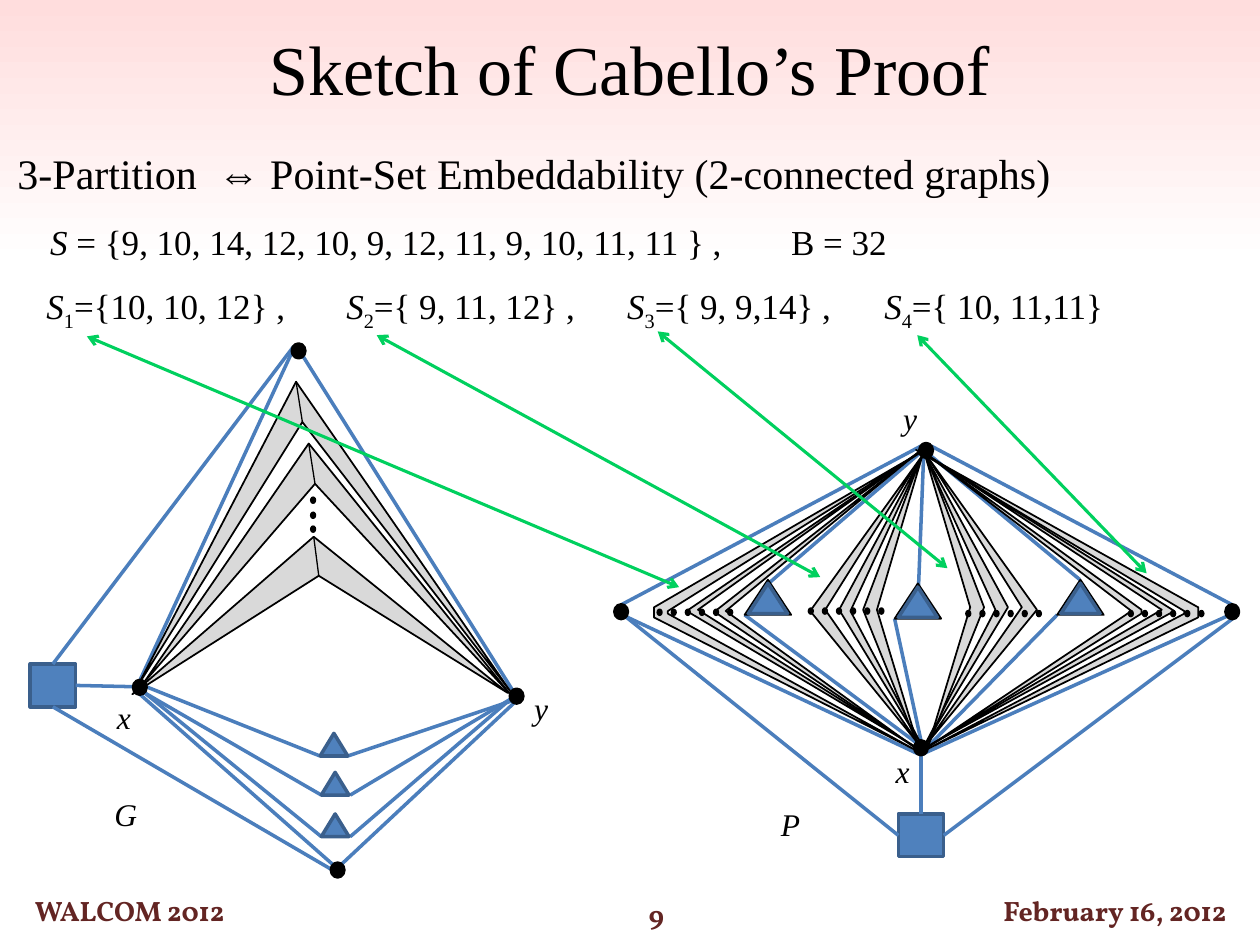
from lxml import etree
from pptx import Presentation
from pptx.dml.color import RGBColor
from pptx.enum.shapes import MSO_CONNECTOR as LineType, MSO_SHAPE as Preset
from pptx.enum.text import MSO_ANCHOR as Anchor, PP_ALIGN as Align
from pptx.oxml.ns import qn
from pptx.util import Inches, Pt

color = RGBColor.from_string
SERIF, FOOTER_FONT = "Times New Roman", "Vollkorn"
BLACK, WHITE, MAROON = "000000", "FFFFFF", "632523"
BLUE, BLUE_EDGE, BLUE_LINE = "4F81BD", "3A5F8C", "4B7EBC"
GRAY, GREEN, PINK = "D9D9D9", "00D05E", "FFDDDD"

deck = Presentation()
deck.slide_width, deck.slide_height = Inches(10), Inches(7.5)
page = deck.slides.add_slide(deck.slide_layouts[5])
shapes = page.shapes


def paint(shape, fill, line=None, width=1):
    shape.shadow.inherit = False
    shape.fill.solid()
    shape.fill.fore_color.rgb = color(fill)
    if line:
        shape.line.color.rgb = color(line)
        shape.line.width = Pt(width)
    else:
        shape.line.fill.background()


def link(start, end, line, width):
    connector = shapes.add_connector(LineType.STRAIGHT, *map(Inches, start + end))
    connector.line.color.rgb = color(line)
    connector.line.width = Pt(width)
    etree.SubElement(connector._element.spPr, qn("a:effectLst"))
    return connector


backdrop = shapes.add_shape(Preset.RECTANGLE, 0, 0, Inches(10), Inches(7.01))
backdrop.shadow.inherit = False
backdrop.line.fill.background()
backdrop.fill.gradient()
backdrop.fill.gradient_angle = 90
for stop, position, tint in zip(backdrop.fill.gradient_stops, (0.7, 1), (WHITE, PINK)):
    stop.position = position
    stop.color.rgb = color(tint)
shapes._spTree.remove(backdrop._element)
shapes._spTree.insert(2, backdrop._element)

title = shapes.title
title.left, title.top = Inches(0), Inches(0.15)
title.width, title.height = Inches(10), Inches(0.77)
title.text_frame.text = "Sketch of Cabello’s Proof"
title_para = title.text_frame.paragraphs[0]
title_para.alignment = Align.CENTER
title_font = title_para.runs[0].font
title_font.name, title_font.size = SERIF, Pt(40)
title_font.color.rgb = color(BLACK)

for left, top, width, words in [
    (0, 7.05, 2.06, "WALCOM 2012"),
    (7.7, 7.05, 2.3, "February 16, 2012"),
    (4.18, 7.08, 2.06, "9"),
]:
    box = shapes.add_shape(Preset.ROUNDED_RECTANGLE, Inches(left), Inches(top), Inches(width), Inches(0.35))
    box.shadow.inherit = False
    box.fill.background()
    box.line.fill.background()
    box.text_frame.text = words
    box.text_frame.word_wrap = False
    box.text_frame.vertical_anchor = Anchor.MIDDLE
    para = box.text_frame.paragraphs[0]
    para.alignment = Align.CENTER
    font = para.runs[0].font
    font.name, font.size, font.bold = FOOTER_FONT, Pt(16), True
    font.color.rgb = color(MAROON)

subsets = []
for number, members in enumerate(
    ["={10, 10, 12} ,\t", "={ 9, 11, 12} ,\t", "={ 9, 9,14} ,\t", "={ 10, 11,11}"], 1
):
    subsets += [("S", "italic"), (str(number), "sub"), (members, "")]

statements = [
    (0.04, 1.12, 8.5, 0.5, 24, [1.59],
     [("3-Partition\t⇔ Point-Set Embeddability (2-connected graphs)", "")]),
    (0.3, 1.7, 6.9, 0.44, 20, [5.88],
     [("S", "italic"), (" = {9, 10, 14, 12, 10, 9, 12, 11, 9, 10, 11, 11 } ,\tB = 32", "")]),
    (0.27, 2.21, 9.73, 0.77, 20, [2.38, 4.61, 6.65], subsets),
]
labels = [("y", 4.14, 5.42), ("x", 0.83, 5.49), ("G", 0.81, 6.26),
          ("P", 6.1, 6.34), ("x", 7.01, 5.92), ("y", 7.07, 3.12)]
for name, left, top in labels:
    width = 0.37 if name.isupper() else 0.31
    statements.append((left, top, width, 0.4, 18, [], [(name, "italic")]))

for left, top, width, height, size, tabs, pieces in statements:
    box = shapes.add_textbox(*map(Inches, (left, top, width, height)))
    box.text_frame.word_wrap = width > 1
    para = box.text_frame.paragraphs[0]
    if tabs:
        tab_list = etree.SubElement(para._p.get_or_add_pPr(), qn("a:tabLst"))
        for tab in tabs:
            etree.SubElement(tab_list, qn("a:tab"), pos=str(Inches(tab)), algn="l")
    for words, style in pieces:
        span = para.add_run()
        span.text = words
        span.font.name, span.font.size = SERIF, Pt(size)
        span.font.italic = style == "italic"
        span.font.color.rgb = color(BLACK)
        if style == "sub":
            span.font._element.set("baseline", "-25000")

for left, top, spokes in [
    (0.24, 5.27, [(0, (2.33, 2.75)), (3, (1.06, 5.45)), (2, (2.63, 6.9))]),
    (7.13, 6.46, [(0, (7.31, 5.99)), (1, (4.96, 4.89)), (3, (9.81, 4.89))]),
]:
    square = shapes.add_shape(Preset.RECTANGLE, Inches(left), Inches(top), Inches(0.36), Inches(0.34))
    paint(square, BLUE, BLUE_EDGE, 2)
    for side, end in spokes:
        link((left, top), end, BLUE_LINE, 2).begin_connect(square, side)

edges = [
    ((1.16, 5.45), (2.54, 6)), ((2.76, 6), (4.07, 5.56)),
    ((1.15, 5.5), (2.55, 6.31)), ((2.78, 6.31), (4.05, 5.55)),
    ((1.15, 5.5), (2.55, 6.64)), ((2.78, 6.64), (4.05, 5.55)),
    ((1.11, 5.51), (2.64, 6.86)), ((2.71, 6.86), (4.09, 5.57)),
    ((2.4, 2.82), (4.07, 5.48)), ((2.32, 2.79), (1.11, 5.4)),
    ((5.91, 4.88), (7.28, 5.9)), ((6.1, 4.63), (7.32, 3.58)),
    ((7.1, 4.91), (7.31, 5.88)), ((7.29, 4.66), (7.33, 3.63)),
    ((8.39, 4.88), (7.35, 5.94)), ((8.57, 4.6), (7.39, 3.62)),
    ((7.31, 3.54), (4.93, 4.8)), ((9.78, 4.8), (7.39, 3.54)),
    ((4.96, 4.89), (7.28, 5.98)), ((7.31, 5.99), (9.74, 4.89)),
]
for start, end in edges:
    link(start, end, BLUE_LINE, 2)

triangles = [(left, top, 0.22, 0.18, BLUE_EDGE, 2) for left, top in [(2.54, 5.82), (2.55, 6.13), (2.55, 6.46)]]
for left, top in [(5.91, 4.6), (7.1, 4.63), (8.39, 4.6)]:
    triangles += [(left, top, 0.37, 0.28, BLACK, 1),
                  (left + 0.03, top + 0.03, 0.31, 0.24, BLUE_EDGE, 2)]
for left, top, width, height, edge, weight in triangles:
    triangle = shapes.add_shape(Preset.ISOSCELES_TRIANGLE, *map(Inches, (left, top, width, height)))
    paint(triangle, BLUE, edge, weight)

blades = [
    [(1.05, 5.51), (2.49, 4.26), (4.03, 5.5), (2.53, 4.57)],
    [(1.09, 5.45), (2.35, 3.03), (4.06, 5.5), (2.4, 3.35)],
    [(1.14, 5.42), (2.45, 3.52), (4.05, 5.51), (2.5, 3.84)],
    [(7.28, 5.96), (5.19, 4.9), (5.19, 4.82), (7.34, 3.57), (5.3, 4.85), (5.3, 4.87)],
    [(7.27, 5.93), (5.45, 4.85), (7.28, 3.6), (5.54, 4.84)],
    [(7.27, 5.94), (5.69, 4.87), (5.69, 4.84), (7.3, 3.58), (5.76, 4.85)],
    [(7.31, 5.93), (6.43, 4.85), (7.31, 3.63), (6.55, 4.84)],
    [(7.33, 5.94), (6.66, 4.84), (7.34, 3.58), (6.75, 4.85)],
    [(7.29, 5.93), (6.85, 4.84), (7.34, 3.55), (6.96, 4.84)],
    [(7.35, 5.91), (8.23, 4.84), (7.35, 3.61), (8.11, 4.82)],
    [(7.33, 5.93), (8, 4.82), (7.32, 3.57), (7.9, 4.84)],
    [(7.37, 5.91), (7.81, 4.82), (7.32, 3.54), (7.7, 4.82)],
    [(7.33, 5.96), (9.51, 4.9), (9.51, 4.82), (7.27, 3.57), (9.4, 4.85), (9.4, 4.87)],
    [(7.35, 5.93), (9.32, 4.85), (7.34, 3.6), (9.22, 4.84)],
    [(7.35, 5.94), (9.06, 4.87), (9.06, 4.84), (7.32, 3.58), (8.98, 4.85)],
]
for blade in blades:
    corners = [(Inches(x), Inches(y)) for x, y in blade]
    builder = shapes.build_freeform(*corners[0])
    builder.add_line_segments(corners[1:], close=True)
    paint(builder.convert_to_shape(), GRAY, BLACK)
for blade in blades[:3]:
    link(blade[1], blade[3], BLACK, 0.75)

vertices = [(4.05, 5.47), (1.06, 5.4), (2.63, 6.85), (2.32, 2.73),
            (7.3, 3.52), (7.26, 5.88), (4.88, 4.8), (9.73, 4.8)]
for left, top in vertices:
    vertex = shapes.add_shape(Preset.OVAL, Inches(left), Inches(top), Inches(0.1), Inches(0.11))
    paint(vertex, BLACK, BLACK, 2)

dots = [(2.46, top) for top in (3.94, 4.06, 4.17)]
for left, top in [(5.21, 4.83), (6.41, 4.82), (7.66, 4.84), (8.95, 4.84)]:
    dots += [(left + 0.56 * step / 5, top) for step in range(6)]
for left, top in dots:
    dot = shapes.add_shape(Preset.OVAL, Inches(left), Inches(top), Inches(0.05), Inches(0.06))
    paint(dot, BLACK)

for start, end in [
    ((5.22, 2.63), (7.52, 4.51)), ((2.99, 2.66), (6.51, 4.58)),
    ((0.69, 2.67), (5.39, 4.66)), ((7.28, 2.66), (9.1, 4.55)),
]:
    arrow = link(start, end, GREEN, 1.75)
    for tip in ("a:headEnd", "a:tailEnd"):
        etree.SubElement(arrow.line._get_or_add_ln(), qn(tip), type="arrow")

deck.save("out.pptx")
